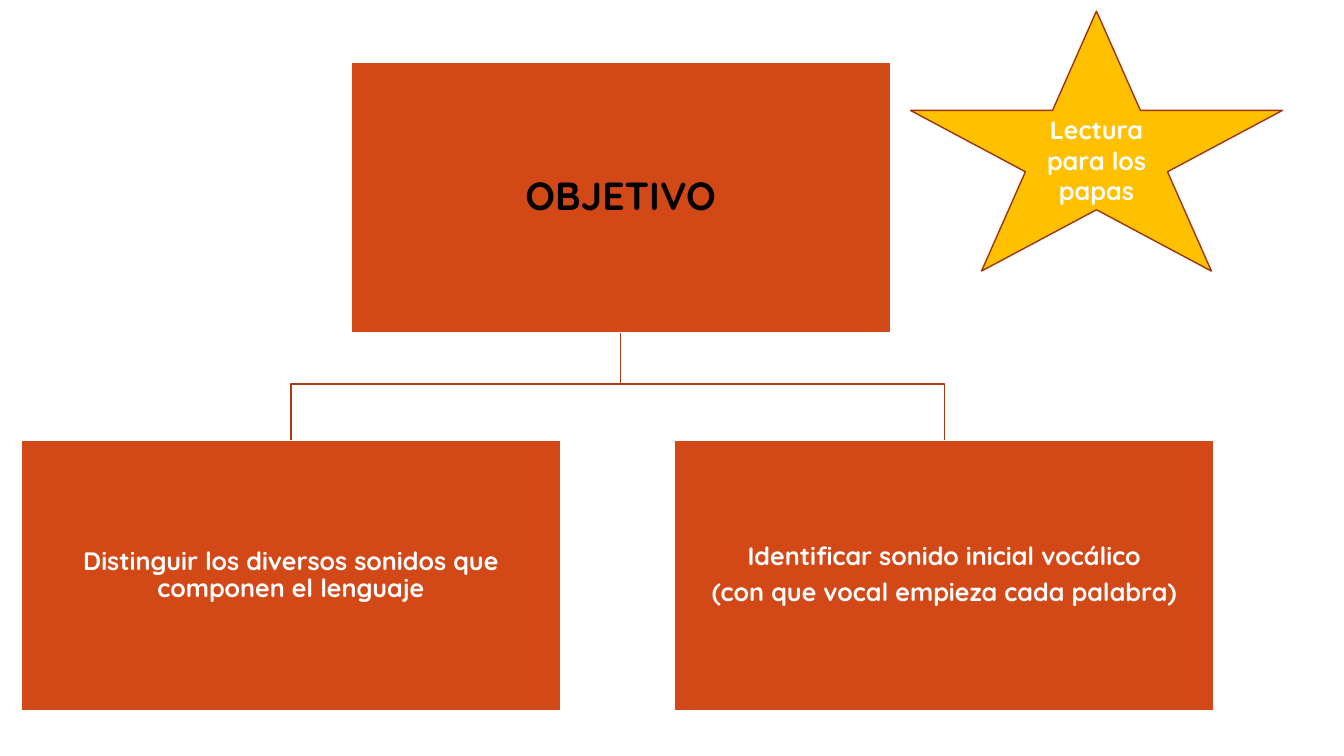
import dataclasses

import pptx
import pptx.dml.color
import pptx.enum.shapes
import pptx.enum.text
import pptx.util

Inches = pptx.util.Inches
Pt = pptx.util.Pt
Shape = pptx.enum.shapes.MSO_SHAPE


@dataclasses.dataclass(frozen=True)
class Theme:
    font: str = "Quicksand"
    title_size: int = 28
    body_size: int = 18
    box: str = "D34817"
    star: str = "FFC000"
    star_line: str = "9C3511"
    branch: str = "A93A12"
    white: str = "FFFFFF"
    black: str = "000000"


def rgb(value):
    return pptx.dml.color.RGBColor.from_string(value)


def write(sp, lines, *, font, size, color, inset=None, spacing=None, after=None):
    tf = sp.text_frame
    tf.word_wrap = True
    tf.auto_size = pptx.enum.text.MSO_AUTO_SIZE.NONE
    tf.vertical_anchor = pptx.enum.text.MSO_ANCHOR.MIDDLE
    if inset is not None:
        tf.margin_left = tf.margin_right = Inches(inset)
        tf.margin_top = tf.margin_bottom = Inches(inset)
    for i, line in enumerate(lines):
        p = tf.add_paragraph() if i else tf.paragraphs[0]
        p.alignment = pptx.enum.text.PP_ALIGN.CENTER
        p.line_spacing = spacing
        p.space_after = after
        r = p.add_run()
        r.text = line
        r.font.name = font
        r.font.size = Pt(size)
        r.font.bold = True
        r.font.color.rgb = rgb(color)


class Deck:
    """Builds the objective chart on one slide in a single style."""

    def __init__(self, prs, theme):
        self.theme = theme
        self.slide = prs.slides.add_slide(prs.slide_layouts[5])

    def paint(self, sp, fill, line):
        sp.fill.solid()
        sp.fill.fore_color.rgb = rgb(fill)
        sp.line.color.rgb = rgb(line)
        sp.line.width = Pt(1)

    def box_text(self, sp, lines, size, color, inset):
        self.paint(sp, self.theme.box, self.theme.white)
        write(sp, lines, font=self.theme.font, size=size, color=color,
              inset=inset, spacing=0.9, after=Pt(0.35 * size))

    def title(self, text, left, top, width, height):
        sp = self.slide.shapes.title
        sp.left, sp.top = Inches(left), Inches(top)
        sp.width, sp.height = Inches(width), Inches(height)
        self.box_text(sp, [text], self.theme.title_size, self.theme.black, 0.02)

    def shape(self, kind, left, top, width, height):
        sp = self.slide.shapes.add_shape(
            kind, Inches(left), Inches(top), Inches(width), Inches(height))
        sp.shadow.inherit = False
        return sp

    def box(self, lines, *frame):
        sp = self.shape(Shape.RECTANGLE, *frame)
        self.box_text(sp, lines, self.theme.body_size, self.theme.white, 0.01)

    def star(self, text, *frame):
        sp = self.shape(Shape.STAR_5_POINT, *frame)
        self.paint(sp, self.theme.star, self.theme.star_line)
        write(sp, [text], font=self.theme.font, size=self.theme.body_size,
              color=self.theme.white)

    def branch(self, *points):
        start, *rest = [(Inches(x), Inches(y)) for x, y in points]
        builder = self.slide.shapes.build_freeform(*start)
        builder.add_line_segments(rest, close=False)
        sp = builder.convert_to_shape()
        sp.shadow.inherit = False
        sp.fill.background()
        sp.line.color.rgb = rgb(self.theme.branch)
        sp.line.width = Pt(1)


def main():
    prs = pptx.Presentation()
    prs.slide_width, prs.slide_height = Inches(13.33), Inches(7.5)
    deck = Deck(prs, Theme())

    width, height = 5.35, 2.68
    root_left, root_top = 3.48, 0.62
    root_x, root_bottom = root_left + width / 2, root_top + height
    bend_y, child_top = 3.81, 4.37
    children = [
        (0.21, ["Distinguir los diversos sonidos que componen el lenguaje"]),
        (6.69, ["Identificar sonido inicial vocálico",
                "(con que vocal empieza cada palabra)"]),
    ]

    deck.title("OBJETIVO", root_left, root_top, width, height)
    deck.star("Lectura para los papas", 9.03, 0.11, 3.69, 2.58)
    for left, lines in children:
        child_x = left + width / 2
        deck.branch((root_x, root_bottom), (root_x, bend_y),
                    (child_x, bend_y), (child_x, child_top))
        deck.box(lines, left, child_top, width, height)
    prs.save("out.pptx")


if __name__ == "__main__":
    main()
